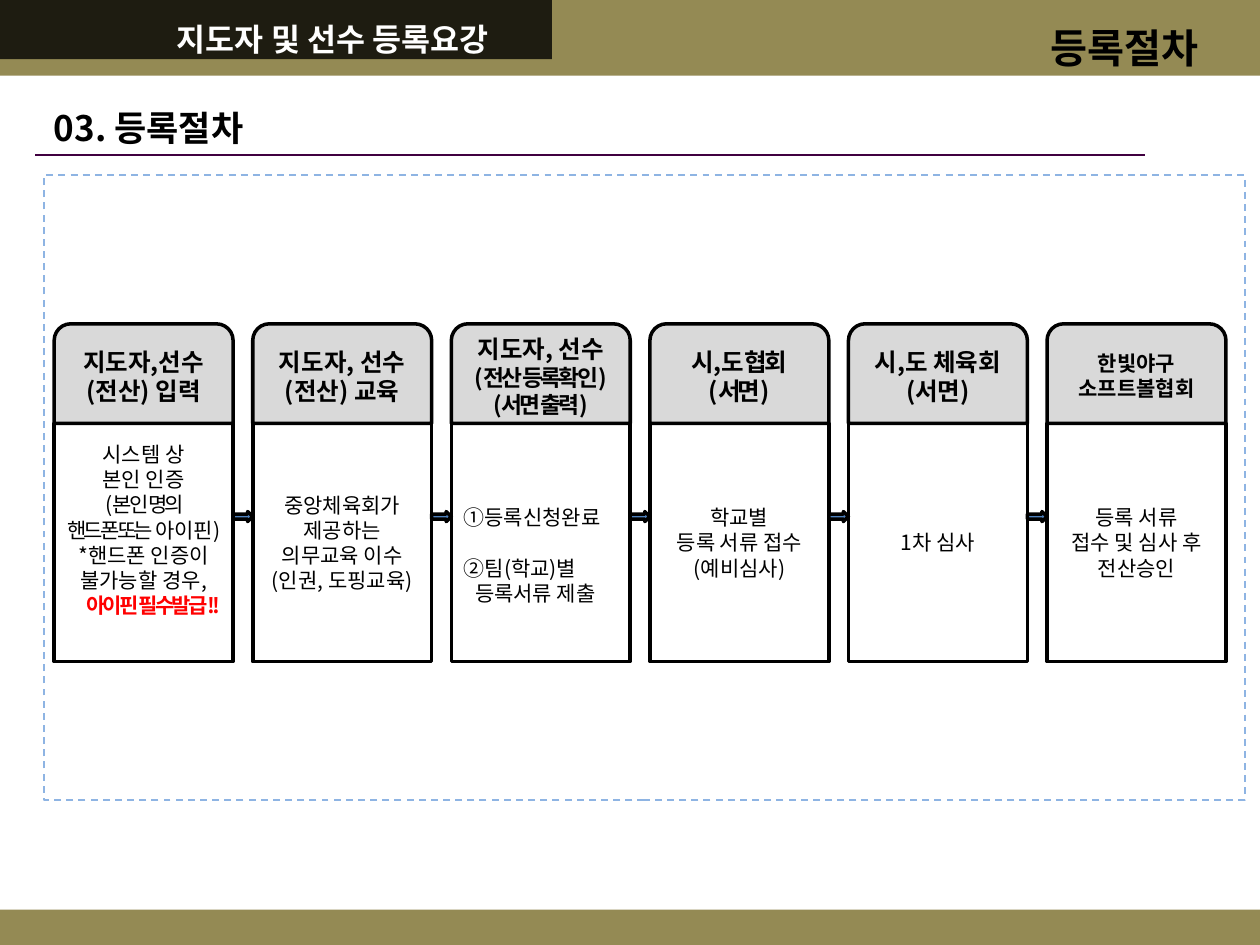
import pptx
import pptx.util
import pptx.dml.color
import pptx.enum.dml
import pptx.enum.shapes
import pptx.enum.text
import pptx.oxml
import pptx.oxml.ns

Inches, Pt = pptx.util.Inches, pptx.util.Pt
SHAPE = pptx.enum.shapes.MSO_SHAPE
ALIGN = pptx.enum.text.PP_ALIGN
MIDDLE = pptx.enum.text.MSO_ANCHOR.MIDDLE

FONT = "Noto Sans CJK KR"
COLORS = {"olive": "948A54", "dark": "1E1C11", "white": "FFFFFF", "black": "000000",
          "rule": "400040", "frame": "8EB4E3", "head": "D9D9D9", "arrow": "4F81BD",
          "red": "FF0000"}
TIGHT = -1.5  # letter spacing in points

# Content: a paragraph is a string or a list of (text, format) runs
BANNER = "지도자 및 선수 등록요강"
SECTION = "등록절차"
TITLE = "03. 등록절차"
STEPS = [
    {"head": ["지도자,선수", "(전산) 입력"],
     "body": ["시스템 상", "본인 인증",
              [("(", {}), ("본인 명의 핸드폰또는 ", {"spc": TIGHT}), ("아이핀)", {})],
              "*핸드폰 인증이 불가능할 경우,",
              [("아이핀 필수발급!!", {"color": "red", "bold": True, "spc": TIGHT})]],
     "right": [4], "shift": -0.1},
    {"head": ["지도자, 선수", "(전산) 교육"],
     "body": ["중앙체육회가", "제공하는", "의무교육 이수", "(인권, 도핑교육)"]},
    {"head": ["지도자, 선수",
              [("(전산 등록확인)", {"size": 13, "spc": TIGHT})],
              [("(서면 출력)", {"size": 13, "spc": TIGHT})]],
     "body": ["①등록신청완료", "②팀(학교)별", "등록서류 제출"],
     "align": ALIGN.LEFT, "gap_before": [1], "indent": [2], "shift": 0.1},
    {"head": [[("시,도 협회", {"spc": TIGHT})], [("(서면)", {"spc": TIGHT})]],
     "body": ["학교별", "등록 서류 접수", "(예비심사)"]},
    {"head": ["시,도 체육회", "(서면)"], "body": ["1차 심사"]},
    {"head": ["한빛야구", "소프트볼협회"], "head_size": 12,
     "body": ["등록 서류", "접수 및 심사 후", "전산승인"]},
]

# Card grid, in inches
LEFT, PITCH, CARD_W = 0.43, 1.576, 1.42
HEAD_TOP, HEAD_H, BODY_H = 2.57, 0.79, 1.89
BODY_TOP = HEAD_TOP + HEAD_H
ARROW_TOP, ARROW_H = 4.06, 0.08


def rgb(name):
    return pptx.dml.color.RGBColor.from_string(COLORS[name])


def add_box(kind, x, y, w, h, fill=None, line=None, width=2):
    sp = slide.shapes.add_shape(kind, Inches(x), Inches(y), Inches(w), Inches(h))
    sp.shadow.inherit = False
    if fill:
        sp.fill.solid()
        sp.fill.fore_color.rgb = rgb(fill)
    else:
        sp.fill.background()
    if line:
        sp.line.color.rgb = rgb(line)
        sp.line.width = Pt(width)
    else:
        sp.line.fill.background()
    return sp


def format_run(r, size, bold=False, color="black", spc=0):
    r.font.size, r.font.bold, r.font.name = Pt(size), bold, FONT
    r.font.color.rgb = rgb(color)
    rpr = r.font._element
    ea = pptx.oxml.parse_xml(
        f'<a:ea {pptx.oxml.ns.nsdecls("a")} typeface="{FONT}"/>')
    rpr.find(pptx.oxml.ns.qn("a:latin")).addnext(ea)
    if spc:
        rpr.set("spc", str(int(spc * 100)))


def write(sp, paragraphs, size, bold=False, color="black", align=ALIGN.CENTER):
    tf = sp.text_frame
    tf.word_wrap = True
    tf.vertical_anchor = MIDDLE
    for i, runs in enumerate(paragraphs):
        p = tf.paragraphs[0] if i == 0 else tf.add_paragraph()
        p.alignment = align
        runs = [(runs, {})] if isinstance(runs, str) else runs
        for text, style in runs:
            r = p.add_run()
            r.text = text
            format_run(r, **{"size": size, "bold": bold, "color": color, **style})
        p.line_spacing = Pt(round(1.2 * runs[0][1].get("size", size), 1))
    return tf


def add_label(text, x, y, w, h, size, color, align):
    sp = slide.shapes.add_textbox(Inches(x), Inches(y), Inches(w), Inches(h))
    write(sp, [text], size, True, color, align)


def add_step(x, step):
    head = add_box(SHAPE.ROUND_2_SAME_RECTANGLE, x, HEAD_TOP, CARD_W, HEAD_H,
                   "head", "black")
    write(head, step["head"], step.get("head_size", 14), bold=True)
    body = add_box(SHAPE.RECTANGLE, x, BODY_TOP, CARD_W, BODY_H, line="black")
    tf = write(body, step["body"], 12, align=step.get("align", ALIGN.CENTER))
    # Move the text block up or down by widening one inset
    shift = step.get("shift", 0)
    tf.margin_top = Inches(0.05 + 2 * max(shift, 0))
    tf.margin_bottom = Inches(0.05 + 2 * max(-shift, 0))
    for i in step.get("right", []):
        tf.paragraphs[i].alignment = ALIGN.RIGHT
    for i in step.get("gap_before", []):
        tf.paragraphs[i].space_before = Pt(14.4)
    for i in step.get("indent", []):
        tf.paragraphs[i]._p.get_or_add_pPr().set("marL", str(Inches(0.09)))


prs = pptx.Presentation()
prs.slide_width, prs.slide_height = Inches(10), Inches(7.5)
slide = prs.slides.add_slide(prs.slide_layouts[5])

# Header and footer bands
add_box(SHAPE.RECTANGLE, 0, 0, 10, 0.6, "olive")
add_box(SHAPE.RECTANGLE, 0, 0, 4.38, 0.47, "dark")
add_box(SHAPE.RECTANGLE, 0, 7.22, 10, 0.28, "olive")
add_label(BANNER, 0.91, 0.13, 3.46, 0.36, 18, "white", ALIGN.CENTER)
add_label(SECTION, 7.44, 0.13, 2.17, 0.49, 23, "black", ALIGN.RIGHT)

# Title with its rule
title = slide.shapes.title
title.left, title.top = Inches(-0.08), Inches(0.78)
title.width, title.height = Inches(2.52), Inches(0.47)
write(title, [TITLE], 20, bold=True)
rule = slide.shapes.add_connector(pptx.enum.shapes.MSO_CONNECTOR.STRAIGHT,
                                  Inches(0.28), Inches(1.23), Inches(9.09), Inches(1.23))
rule.line.color.rgb = rgb("rule")
rule.line.width = Pt(1)
rule._element.spPr.append(
    pptx.oxml.parse_xml(f'<a:effectLst {pptx.oxml.ns.nsdecls("a")}/>'))

# Dashed frame
frame = add_box(SHAPE.RECTANGLE, 0.35, 1.39, 9.53, 4.96, line="frame", width=1)
frame.line.dash_style = pptx.enum.dml.MSO_LINE.DASH

# Step cards, then the arrows in the gaps
for i, step in enumerate(STEPS):
    add_step(LEFT + i * PITCH, step)
for i in range(len(STEPS) - 1):
    add_box(SHAPE.RIGHT_ARROW, LEFT + i * PITCH + CARD_W, ARROW_TOP,
            PITCH - CARD_W, ARROW_H, "arrow", "black")

prs.save("out.pptx")
